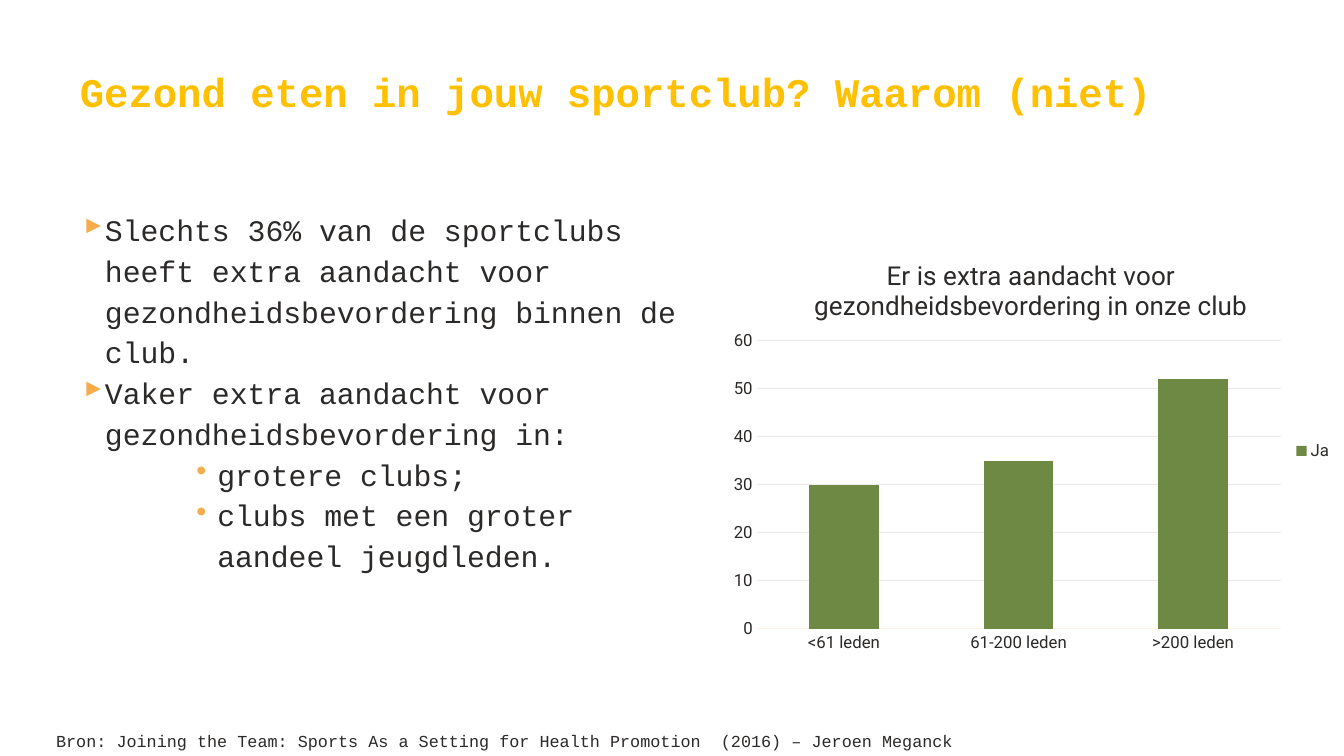
from dataclasses import dataclass

from lxml import etree
from pptx import Presentation
from pptx.chart.data import CategoryChartData
from pptx.dml.color import RGBColor
from pptx.enum.chart import XL_CHART_TYPE, XL_LEGEND_POSITION, XL_TICK_MARK
from pptx.oxml import parse_xml
from pptx.oxml.ns import nsdecls, qn
from pptx.util import Pt

COLUMN_STACKED = XL_CHART_TYPE.COLUMN_STACKED
LEGEND_RIGHT = XL_LEGEND_POSITION.RIGHT
NO_TICK = XL_TICK_MARK.NONE
EMU_PER_PX = 9525
BLANK_LAYOUT = 6


def px(length):
    return length * EMU_PER_PX


@dataclass(frozen=True)
class Theme:
    ink: str = "2C2A29"
    heading: str = "FFC000"
    bullet: str = "F7AC4B"
    column: str = "6E8944"
    axis: str = "FEF3E4"
    grid: str = "EBEAE9"
    text_font: str = "Courier New"
    chart_font: str = "Roboto"
    heading_size: float = 29
    body_size: float = 21.3
    chart_title_size: float = 18.6
    small_size: float = 12
    line_width: float = 0.75
    line_spacing: float = 1.14


class SlideBuilder:
    def __init__(self, slide, theme):
        self.slide = slide
        self.theme = theme

    def style(self, font, size, color, name, bold=False):
        font.size = Pt(size)
        font.name = name
        font.bold = bold
        font.color.rgb = RGBColor.from_string(color)

    def line(self, line_format, color):
        line_format.color.rgb = RGBColor.from_string(color)
        line_format.width = Pt(self.theme.line_width)

    def frame(self, box, flush=True):
        text_frame = self.slide.shapes.add_textbox(*map(px, box)).text_frame
        text_frame.word_wrap = True
        if flush:
            text_frame.margin_left = text_frame.margin_right = 0
            text_frame.margin_top = text_frame.margin_bottom = 0
        return text_frame

    def run(self, paragraph, text, size, color, bold=False):
        run = paragraph.add_run()
        run.text = text
        self.style(run.font, size, color, self.theme.text_font, bold)

    def text(self, box, text, size, color, bold=False, flush=True):
        self.run(self.frame(box, flush).paragraphs[0], text, size, color, bold)

    def bullets(self, box, items, levels, hanging):
        text_frame = self.frame(box)
        for index, (level, text) in enumerate(items):
            paragraph = text_frame.add_paragraph() if index else text_frame.paragraphs[0]
            paragraph.level = level
            paragraph.line_spacing = self.theme.line_spacing
            indent, mark = levels[level]
            properties = paragraph._p.get_or_add_pPr()
            properties.set("marL", str(px(indent)))
            properties.set("indent", str(-px(hanging)))
            color = etree.SubElement(properties, qn("a:buClr"))
            etree.SubElement(color, qn("a:srgbClr"), val=self.theme.bullet)
            etree.SubElement(properties, qn("a:buChar"), char=mark)
            self.run(paragraph, text, self.theme.body_size, self.theme.ink)

    def column_chart(self, box, title, categories, series_name, values, plot_area):
        theme = self.theme
        data = CategoryChartData()
        data.categories = categories
        data.add_series(series_name, values)
        chart = self.slide.shapes.add_chart(COLUMN_STACKED, *map(px, box), data).chart
        self.style(chart.font, theme.small_size, theme.ink, theme.chart_font)

        # Title and legend
        title_run = chart.chart_title.text_frame.paragraphs[0].add_run()
        title_run.text = title
        self.style(title_run.font, theme.chart_title_size, theme.ink, theme.chart_font)
        chart.chart_title.include_in_layout = False
        chart.has_legend = True
        chart.legend.position = LEGEND_RIGHT
        chart.legend.include_in_layout = False
        self.style(chart.legend.font, theme.small_size, theme.ink, theme.chart_font)

        # Axes
        for axis in (chart.category_axis, chart.value_axis):
            axis.major_tick_mark = axis.minor_tick_mark = NO_TICK
            self.style(axis.tick_labels.font, theme.small_size, theme.ink, theme.chart_font)
        self.line(chart.category_axis.format.line, theme.axis)
        value_axis = chart.value_axis
        value_axis.format.line.fill.background()
        value_axis.minimum_scale, value_axis.maximum_scale = 0, 60
        value_axis.major_unit = 10
        self.line(value_axis.major_gridlines.format.line, theme.grid)

        # Columns
        plot = chart.plots[0]
        plot.gap_width, plot.overlap = 150, 100
        plot.vary_by_categories = False
        fill = plot.series[0].format.fill
        fill.solid()
        fill.fore_color.rgb = RGBColor.from_string(theme.column)
        self.place_plot(chart, plot_area)

    def place_plot(self, chart, plot_area):
        modes = '<c:xMode val="edge"/><c:yMode val="edge"/>'
        sizes = "".join(f'<c:{key} val="{value}"/>' for key, value in zip("xywh", plot_area))
        layout = parse_xml(
            f'<c:layout {nsdecls("c")}><c:manualLayout><c:layoutTarget val="inner"/>'
            f"{modes}{sizes}</c:manualLayout></c:layout>"
        )
        area = chart._chartSpace.chart.plotArea
        for existing in area.findall(qn("c:layout")):
            area.remove(existing)
        area.insert(0, layout)


def main():
    presentation = Presentation()
    presentation.slide_width, presentation.slide_height = px(1280), px(720)
    slide = presentation.slides.add_slide(presentation.slide_layouts[BLANK_LAYOUT])
    theme = Theme()
    builder = SlideBuilder(slide, theme)

    # Reasons
    reasons = [
        (0, "Slechts 36% van de sportclubs heeft extra aandacht voor "
            "gezondheidsbevordering binnen de club."),
        (0, "Vaker extra aandacht voor gezondheidsbevordering in:"),
        (1, "grotere clubs;"),
        (1, "clubs met een groter aandeel jeugdleden."),
    ]
    builder.bullets((76, 197, 580, 403), reasons, levels=[(24, "▸"), (131, "•")], hanging=20)

    # Attention by club size
    builder.column_chart(
        (685, 228, 594, 403),
        "Er is extra aandacht voor gezondheidsbevordering in onze club",
        ["<61 leden", "61-200 leden", ">200 leden"],
        "Ja",
        [30, 35, 52],
        plot_area=(0.06, 0.24, 0.84, 0.68),
    )

    # Heading and source line
    builder.text((76, 64, 1154, 37), "Gezond eten in jouw sportclub? Waarom (niet)",
                 theme.heading_size, theme.heading, bold=True)
    builder.text((44, 691, 1222, 29),
                 "Bron: Joining the Team: Sports As a Setting for Health Promotion  (2016) "
                 "– Jeroen Meganck",
                 theme.small_size, theme.ink, flush=False)

    presentation.save("out.pptx")


if __name__ == "__main__":
    main()
